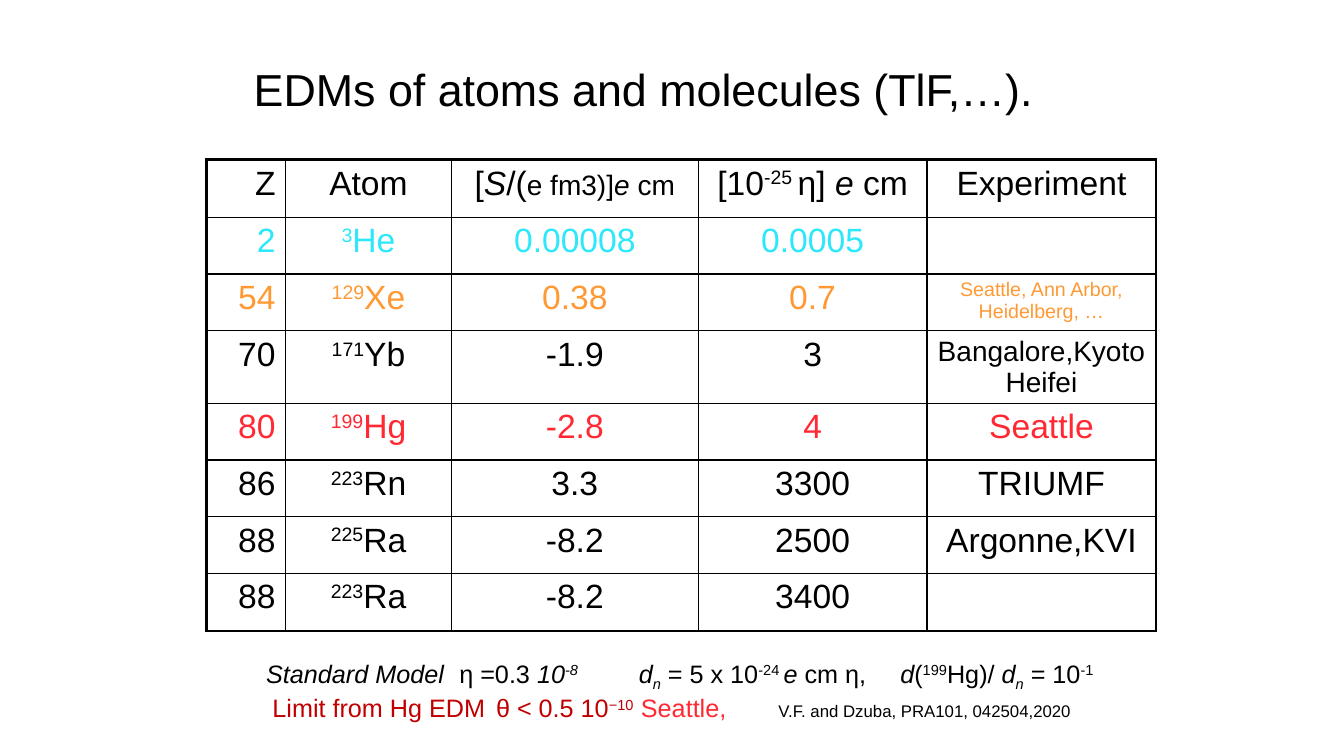
from lxml.etree import SubElement
from pptx import Presentation
from pptx.dml.color import RGBColor
from pptx.enum.text import MSO_ANCHOR as Anchor, MSO_AUTO_SIZE as AutoSize, PP_ALIGN as Align
from pptx.oxml.ns import qn
from pptx.util import Pt

PX = 9525
COLORS = {"black": "000000", "cyan": "2DE7FB", "orange": "FF9933",
          "red": "FF2833", "dark red": "C00000"}
BASELINES = {"sup": 30000, "sub": -25000}

COLUMN_WIDTHS = [75, 158, 235, 218, 218]
ROW_HEIGHTS = [55, 54, 54, 69, 54, 54, 54, 55]
HEADER = [
    "Z",
    "Atom",
    [("[",), ("S", "i"), ("/(",), ("e fm3)]", 20), ("e", "i", 20), (" cm", 20)],
    [("[10",), ("-25 ", "sup"), ("η] ",), ("e", "i"), (" cm",)],
    "Experiment",
]
# Z, mass number, symbol, Schiff moment factor, η factor, experiment, its size, colour
ATOMS = [
    ("2", "3", "He", "0.00008", "0.0005", "", 24, "cyan"),
    ("54", "129", "Xe", "0.38", "0.7", "Seattle, Ann Arbor, Heidelberg, …", 14, "orange"),
    ("70", "171", "Yb", "-1.9", "3", "Bangalore,Kyoto\nHeifei", 20, "black"),
    ("80", "199", "Hg", "-2.8", "4", "Seattle", 24, "red"),
    ("86", "223", "Rn", "3.3", "3300", "TRIUMF", 24, "black"),
    ("88", "225", "Ra", "-8.2", "2500", "Argonne,KVI", 24, "black"),
    ("88", "223", "Ra", "-8.2", "3400", "", 24, "black"),
]
STANDARD_MODEL = [
    ("\tStandard Model", "i"), ("\tη =0.3 ",), ("10", "i"), ("-8", "i", "sup"),
    ("\td", "i"), ("n", "i", "sub"), (" = 5 x 10",), ("-24 ", "sup"), ("e", "i"),
    (" cm η,",), ("\td", "i"), ("(",), ("199", "sup"), ("Hg)/ ",), ("d", "i"),
    ("n", "i", "sub"), (" = 10",), ("-1", "sup"),
]
MERCURY_LIMIT = [
    ("\tLimit from Hg EDM\tθ < 0.5 10", "dark red"), ("−10", "sup", "dark red"),
    ("\tSeattle,", "red"), ("\tV.F. and Dzuba, PRA101, 042504,2020", 12),
]


class SlideBuilder:
    font_name = "Arial"

    def __init__(self, presentation):
        self.slide = presentation.slides.add_slide(presentation.slide_layouts[5])

    def add_runs(self, paragraph, pieces, size, color="black"):
        """Add a string, or pieces of (text, *marks); a number mark is a size."""
        if isinstance(pieces, str):
            pieces = [(pieces,)]
        for text, *marks in pieces:
            sizes = [mark for mark in marks if isinstance(mark, int)]
            colors = [mark for mark in marks if mark in COLORS]
            formats = {"name": self.font_name, "size": Pt((sizes or [size])[0]),
                       "italic": "i" in marks}
            for index, line in enumerate(text.split("\n")):
                if index:
                    paragraph.add_line_break()
                run = paragraph.add_run()
                run.text = line
                for name, value in formats.items():
                    setattr(run.font, name, value)
                run.font.color.rgb = RGBColor.from_string(COLORS[(colors or [color])[0]])
                for mark in BASELINES.keys() & marks:
                    run._r.get_or_add_rPr().set("baseline", str(BASELINES[mark]))

    def title(self, text, box, size):
        title = self.slide.shapes.title
        title.left, title.top, title.width, title.height = [n * PX for n in box]
        frame = title.text_frame
        formats = {"vertical_anchor": Anchor.MIDDLE, "auto_size": AutoSize.NONE,
                   "word_wrap": True}
        for name, value in formats.items():
            setattr(frame, name, value)
        paragraph = frame.paragraphs[0]
        paragraph.alignment = Align.LEFT
        paragraph.line_spacing = 0.9
        self.add_runs(paragraph, text, size)

    def table(self, left, top, widths, heights):
        table = self.slide.shapes.add_table(
            len(heights), len(widths), left * PX, top * PX,
            sum(widths) * PX, sum(heights) * PX).table
        table.first_row = table.horz_banding = False
        for column, width in zip(table.columns, widths):
            column.width = width * PX
        for row, height in zip(table.rows, heights):
            row.height = height * PX
        last_row, last_column = len(heights) - 1, len(widths) - 1
        for r in range(len(heights)):
            for c in range(len(widths)):
                cell = table.cell(r, c)
                outer = {"lnL": c == 0, "lnR": c == last_column,
                         "lnT": r == 0, "lnB": r == last_row}
                for side, is_outer in outer.items():
                    self.border(cell, side, 2.25 if is_outer else 1)
                cell.fill.background()
        return table

    def border(self, cell, side, width):
        line = SubElement(cell._tc.get_or_add_tcPr(), qn(f"a:{side}"), w=str(int(Pt(width))))
        fill = SubElement(line, qn("a:solidFill"))
        SubElement(fill, qn("a:srgbClr"), val=COLORS["black"])

    def fill_row(self, table, row, contents, sizes, color="black"):
        for column, (content, size) in enumerate(zip(contents, sizes)):
            paragraph = table.cell(row, column).text_frame.paragraphs[0]
            paragraph.alignment = Align.CENTER if column else Align.RIGHT
            if content:
                self.add_runs(paragraph, content, size, color)

    def tabbed_text(self, box, lines, size):
        """Add a text box from (pieces, tab positions) lines."""
        frame = self.slide.shapes.add_textbox(*[n * PX for n in box]).text_frame
        frame.word_wrap = True
        for index, (pieces, tabs) in enumerate(lines):
            paragraph = frame.add_paragraph() if index else frame.paragraphs[0]
            tab_list = SubElement(paragraph._p.get_or_add_pPr(), qn("a:tabLst"))
            for position in tabs:
                SubElement(tab_list, qn("a:tab"), pos=str(position * PX), algn="l")
            self.add_runs(paragraph, pieces, size)


def main():
    presentation = Presentation()
    presentation.slide_width, presentation.slide_height = 1280 * PX, 720 * PX
    builder = SlideBuilder(presentation)
    builder.title("EDMs of atoms and molecules (TlF,…).", (232, 40, 816, 96), 32)

    table = builder.table(197, 152, COLUMN_WIDTHS, ROW_HEIGHTS)
    builder.fill_row(table, 0, HEADER, [24] * 5)
    for row, (z, mass, symbol, schiff, eta, place, size, color) in enumerate(ATOMS, 1):
        atom = [(mass, "sup"), (symbol,)]
        builder.fill_row(table, row, [z, atom, schiff, eta, place], [24] * 4 + [size], color)

    builder.tabbed_text((238, 622, 858, 107), [
        (STANDARD_MODEL, [6, 190, 361, 610]),
        (MERCURY_LIMIT, [12, 225, 363, 494]),
    ], 18)
    presentation.save("out.pptx")


if __name__ == "__main__":
    main()
